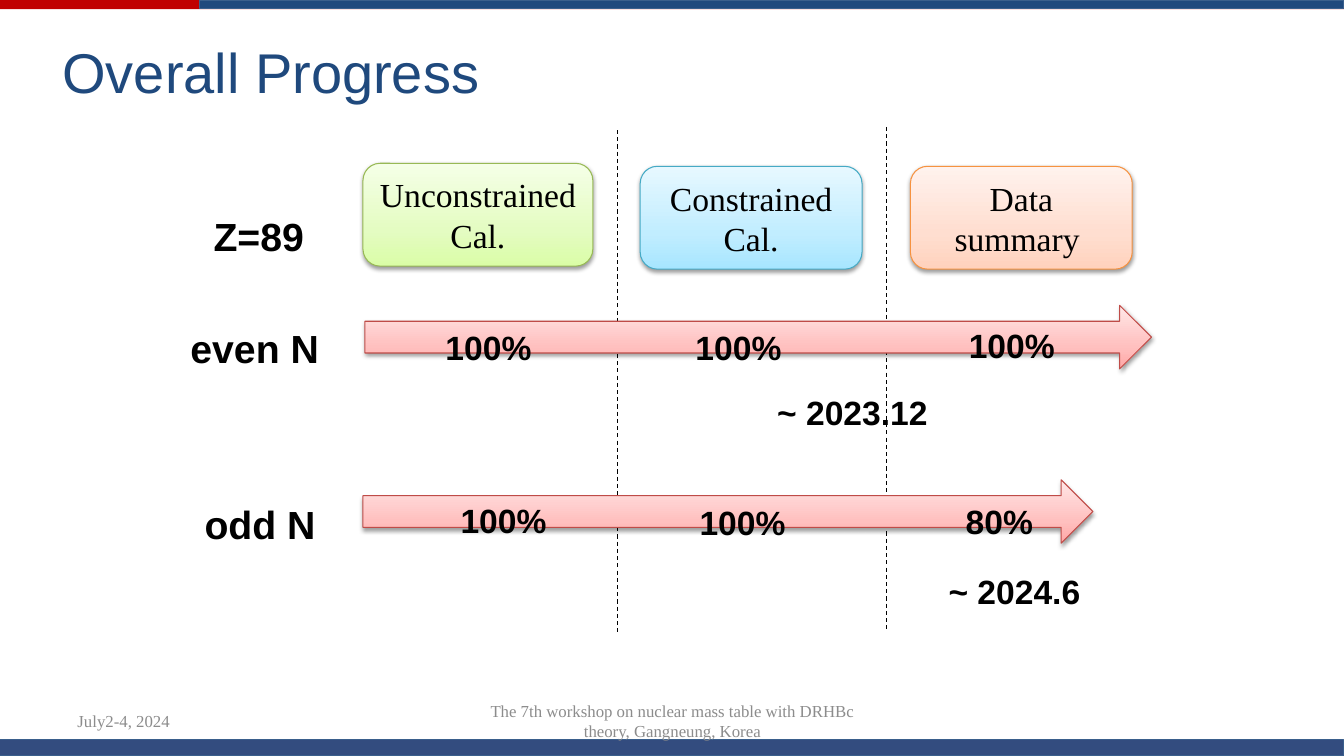
"""Build the overall progress slide."""
from copy import deepcopy
from dataclasses import dataclass

from lxml.etree import SubElement as Sub
from pptx import Presentation
from pptx.dml.color import RGBColor
from pptx.enum.dml import MSO_LINE
from pptx.enum.shapes import MSO_CONNECTOR, MSO_SHAPE as Kind
from pptx.enum.text import MSO_ANCHOR as Anchor, PP_ALIGN as Align
from pptx.oxml.ns import qn
from pptx.shapes.autoshape import Shape
from pptx.slide import Slide
from pptx.util import Inches, Pt

BLACK = RGBColor(0, 0, 0)
GREY = RGBColor(0x8C, 0x8C, 0x8C)
NAVY = RGBColor(0x1F, 0x49, 0x7D)
EDGE = RGBColor(0x3A, 0x5F, 0x8C)
DEEP = RGBColor(0x00, 0x20, 0x60)
CRIMSON = RGBColor(0xC0, 0x00, 0x00)
SANS, SERIF = "Arial", "Times New Roman"
STOPS = (0, 0.35, 1)


@dataclass(frozen=True)
class Box:
    left: float
    top: float
    width: float
    height: float

    def inches(self) -> tuple:
        return tuple(map(Inches, (self.left, self.top, self.width, self.height)))


@dataclass(frozen=True)
class Tint:
    line: RGBColor
    fades: tuple


@dataclass(frozen=True)
class Stage:
    text: str
    box: Box
    tint: Tint


@dataclass(frozen=True)
class Style:
    size: int
    font: str = SANS
    color: RGBColor = BLACK
    bold: bool = False
    align: Align = Align.LEFT
    anchor: Anchor = Anchor.MIDDLE
    space: float = 1.0


@dataclass(frozen=True)
class Label:
    text: str
    box: Box
    style: Style
    wrap: bool = True


def tint(line: str, *fades: str) -> Tint:
    return Tint(RGBColor.from_string(line), tuple(map(RGBColor.from_string, fades)))


GREEN = tint("98B955", "DAFDA7", "E4FCC2", "F5FFE7")
BLUE = tint("46AAC5", "A7E6FF", "C1EDFF", "E7F8FF")
ORANGE = tint("F69240", "FFD2BD", "FFDED0", "FFF2ED")
RED = tint("BF4C48", "FFA6A5", "FFC0BF", "FFE7E7")

TITLE = Style(40, color=NAVY)
STAGE = Style(24, SERIF, align=Align.CENTER)
ROW = Style(28, bold=True, anchor=Anchor.TOP, space=1.5)
TAG = Style(24, bold=True, anchor=Anchor.TOP, space=1.5)
DATE = Style(12, SERIF, GREY)
VENUE = Style(12, SERIF, GREY, align=Align.CENTER)

STAGES = (
    Stage("Unconstrained Cal.", Box(3.6, 1.62, 2.28, 1.02), GREEN),
    Stage("Constrained Cal.", Box(6.35, 1.65, 2.2, 1.02), BLUE),
    Stage("Data summary ", Box(9.03, 1.65, 2.2, 1.02), ORANGE),
)
ARROWS = (Box(3.62, 3.03, 7.8, 0.63), Box(3.6, 4.76, 7.24, 0.63))
RULES = ((8.79, 1.26), (6.12, 1.29))
LABELS = (
    Label("Overall Progress", Box(0.52, 0.13, 12.19, 1.16), TITLE),
    Label("Z=89", Box(2.02, 1.82, 1.18, 0.72), ROW),
    Label("even N", Box(1.79, 2.93, 1.69, 0.72), ROW),
    Label("100%", Box(4.32, 2.99, 1.06, 0.63), TAG, False),
    Label("100%", Box(6.8, 2.99, 1.06, 0.63), TAG, False),
    Label("100%", Box(9.51, 2.97, 1.19, 0.63), TAG),
    Label("~ 2023.12", Box(7.61, 3.64, 1.83, 0.63), TAG),
    Label("odd N", Box(1.93, 4.68, 1.69, 0.72), ROW),
    Label("100%", Box(4.47, 4.71, 1.06, 0.63), TAG, False),
    Label("100%", Box(6.84, 4.73, 1.06, 0.63), TAG, False),
    Label("80%", Box(9.48, 4.72, 1.1, 0.63), TAG),
    Label("~ 2024.6", Box(9.31, 5.41, 1.83, 0.63), TAG),
    Label("July2-4, 2024", Box(0.67, 6.95, 3.11, 0.4), DATE),
    Label("The 7th workshop on nuclear mass table with DRHBc theory, Gangneung, Korea",
          Box(4.56, 6.95, 4.22, 0.4), VENUE),
)


def write(shape: Shape, text: str, style: Style, wrap: bool = True) -> None:
    frame = shape.text_frame
    frame.word_wrap = wrap
    frame.vertical_anchor = style.anchor
    para = frame.paragraphs[0]
    para.text = text
    para.alignment = style.align
    para.line_spacing = style.space
    font = para.font
    font.name, font.size, font.bold = style.font, Pt(style.size), style.bold
    font.color.rgb = style.color


def bar(slide: Slide, box: Box, color: RGBColor, edge: bool = True) -> Shape:
    shape = slide.shapes.add_shape(Kind.RECTANGLE, *box.inches())
    shape.shadow.inherit = False
    shape.fill.solid()
    shape.fill.fore_color.rgb = color
    if edge:
        shape.line.color.rgb = EDGE
        shape.line.width = Pt(0)
    else:
        shape.line.fill.background()
    return shape


def glow(slide: Slide, kind: Kind, box: Box, tone: Tint) -> Shape:
    shape = slide.shapes.add_shape(kind, *box.inches())
    fill = shape.fill
    fill.gradient()
    fill.gradient_angle = 90
    props = shape._element.spPr
    stops = props.find(".//" + qn("a:gsLst"))
    stops.append(deepcopy(stops[0]))
    for stop, place, color in zip(fill.gradient_stops, STOPS, tone.fades):
        stop.position = place
        stop.color.rgb = color
    shape.line.color.rgb = tone.line
    shape.line.width = Pt(0.75)
    shape.shadow.inherit = False
    shade = Sub(props.find(qn("a:effectLst")), qn("a:outerShdw"), blurRad="40000",
                dist="20000", dir="5400000", rotWithShape="0")
    black = Sub(shade, qn("a:srgbClr"), val="000000")
    Sub(black, qn("a:alpha"), val="38000")
    return shape


def rule(slide: Slide, left: float, top: float) -> None:
    line = slide.shapes.add_connector(MSO_CONNECTOR.STRAIGHT, Inches(left), Inches(top),
                                      Inches(left), Inches(top + 4.98))
    line.line.color.rgb = BLACK
    line.line.width = Pt(0.75)
    line.line.dash_style = MSO_LINE.DASH
    Sub(line._element.spPr, qn("a:effectLst"))


def main() -> None:
    deck = Presentation()
    deck.slide_width, deck.slide_height = Inches(13.33), Inches(7.5)
    slide = deck.slides.add_slide(deck.slide_layouts[6])
    bar(slide, Box(0, 0, 13.33, 0.09), CRIMSON, edge=False)
    bar(slide, Box(1.98, 0, 11.35, 0.08), NAVY)
    foot = bar(slide, Box(0, 7.34, 13.33, 0.16), DEEP)
    color = foot._element.spPr.find(qn("a:solidFill"))[0]
    Sub(color, qn("a:alpha"), val="80000")
    for left, top in RULES:
        rule(slide, left, top)
    for stage in STAGES:
        card = glow(slide, Kind.ROUNDED_RECTANGLE, stage.box, stage.tint)
        write(card, stage.text, STAGE)
    for box in ARROWS:
        glow(slide, Kind.RIGHT_ARROW, box, RED)
    for label in LABELS:
        shape = slide.shapes.add_textbox(*label.box.inches())
        write(shape, label.text, label.style, label.wrap)
    deck.save("out.pptx")


if __name__ == "__main__":
    main()
